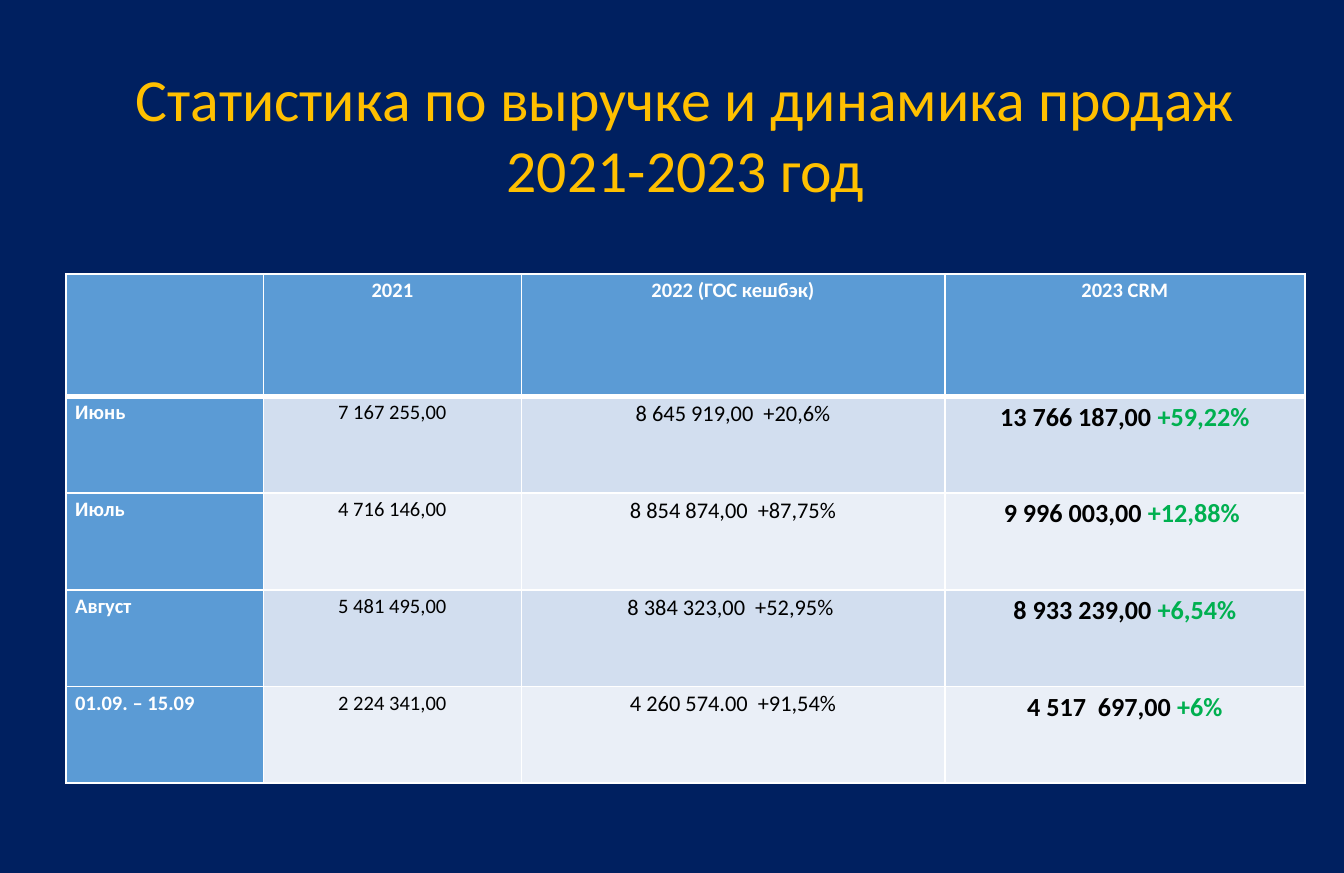
from lxml import etree
from pptx import Presentation
from pptx import util as u
from pptx.dml.color import RGBColor
from pptx.enum import text
from pptx.oxml.ns import qn

PX = 9144  # EMU in one px, 100 px to the inch
SLIDE_WIDTH, SLIDE_HEIGHT = u.Emu(9144000), u.Emu(5940425)
FONT = "Calibri"
NAVY, GOLD, WHITE, BLACK = "002060", "FFC000", "FFFFFF", "000000"
BLUE, GREEN = "5B9BD5", "00B050"
BANDS = ("D2DEEF", "EAEFF7")

TITLE = ("Статистика по выручке и динамика продаж", "2021-2023 год")
HEADINGS = ("", "2021", "2022 (ГОС кешбэк)", "2023 CRM")
MONTHS = (
    ("Июнь", "7 167 255,00", "8 645 919,00  +20,6%", "13 766 187,00 ", "+59,22%"),
    ("Июль", "4 716 146,00", "8 854 874,00  +87,75%", "9 996 003,00", " +12,88% "),
    ("Август", "5 481 495,00", "8 384 323,00  +52,95% ", "8 933 239,00 ", "+6,54%"),
    ("01.09. – 15.09", "2 224 341,00", "4 260 574.00  +91,54%", "4 517  697,00 ", "+6%"),
)
COLUMN_WIDTHS = (147, 192, 315, 268)
HEADING_HEIGHT, MONTH_HEIGHT = 91, 72


def px(length):
    return u.Emu(length * PX)


def color(hex_string):
    return RGBColor.from_string(hex_string)


def add_text(paragraph, words, size=11, fill=BLACK, bold=False, centred=True, spacing=None):
    paragraph.alignment = text.PP_ALIGN.CENTER if centred else text.PP_ALIGN.LEFT
    paragraph.line_spacing = spacing
    run = paragraph.add_run()
    run.text = words
    run.font.name = FONT
    run.font.size = u.Pt(size)
    run.font.bold = bold
    run.font.color.rgb = color(fill)


def add_border(cell, side, points):
    line = etree.SubElement(cell._tc.get_or_add_tcPr(), qn(f"a:ln{side}"), w=str(u.Pt(points)))
    solid = etree.SubElement(line, qn("a:solidFill"))
    etree.SubElement(solid, qn("a:srgbClr"), val=WHITE)


def format_cell(cell, fill, top=1, bottom=1):
    cell.margin_left = cell.margin_right = px(7)
    cell.margin_top = cell.margin_bottom = 0
    for side, points in (("L", 1), ("R", 1), ("T", top), ("B", bottom)):
        add_border(cell, side, points)
    cell.fill.solid()
    cell.fill.fore_color.rgb = color(fill)


def place_title(slide, left, top, width, height):
    title = slide.shapes.title
    title.left, title.top, title.width, title.height = map(px, (left, top, width, height))
    frame = title.text_frame
    frame.word_wrap = False
    frame.vertical_anchor = text.MSO_ANCHOR.MIDDLE
    add_text(frame.paragraphs[0], TITLE[0], size=32, fill=GOLD)
    add_text(frame.add_paragraph(), TITLE[1], size=32, fill=GOLD)


def add_revenue_table(slide, left, top):
    width = sum(COLUMN_WIDTHS)
    height = HEADING_HEIGHT + MONTH_HEIGHT * len(MONTHS)
    table = slide.shapes.add_table(
        len(MONTHS) + 1, len(COLUMN_WIDTHS), *map(px, (left, top, width, height))
    ).table
    for column, column_width in zip(table.columns, COLUMN_WIDTHS):
        column.width = px(column_width)
    for index, row in enumerate(table.rows):
        row.height = px(MONTH_HEIGHT if index else HEADING_HEIGHT)

    for cell, heading in zip(table.rows[0].cells, HEADINGS):
        format_cell(cell, BLUE, bottom=3)
        if heading:
            add_text(cell.text_frame.paragraphs[0], heading, fill=WHITE, bold=True, spacing=1.15)

    for index, (month, first, second, third, growth) in enumerate(MONTHS):
        cells = list(table.rows[index + 1].cells)
        for column, cell in enumerate(cells):
            fill = BANDS[index % 2] if column else BLUE
            format_cell(cell, fill, top=1 if index else 3)
        name, y2021, y2022, y2023 = (cell.text_frame.paragraphs[0] for cell in cells)
        add_text(name, month, fill=WHITE, bold=True, centred=False, spacing=1.15)
        add_text(y2021, first, spacing=1.15)
        add_text(y2022, second, size=12, spacing=1.15)
        add_text(y2023, third, size=14, bold=True, spacing=1.15)
        add_text(y2023, growth, size=14, fill=GREEN, bold=True, spacing=1.15)


def main():
    deck = Presentation()
    deck.slide_width, deck.slide_height = SLIDE_WIDTH, SLIDE_HEIGHT
    slide = deck.slides.add_slide(deck.slide_layouts[5])
    slide.background.fill.solid()
    slide.background.fill.fore_color.rgb = color(NAVY)
    add_revenue_table(slide, 49, 204)
    place_title(slide, 87, 40, 846, 118)
    deck.save("out.pptx")


if __name__ == "__main__":
    main()
